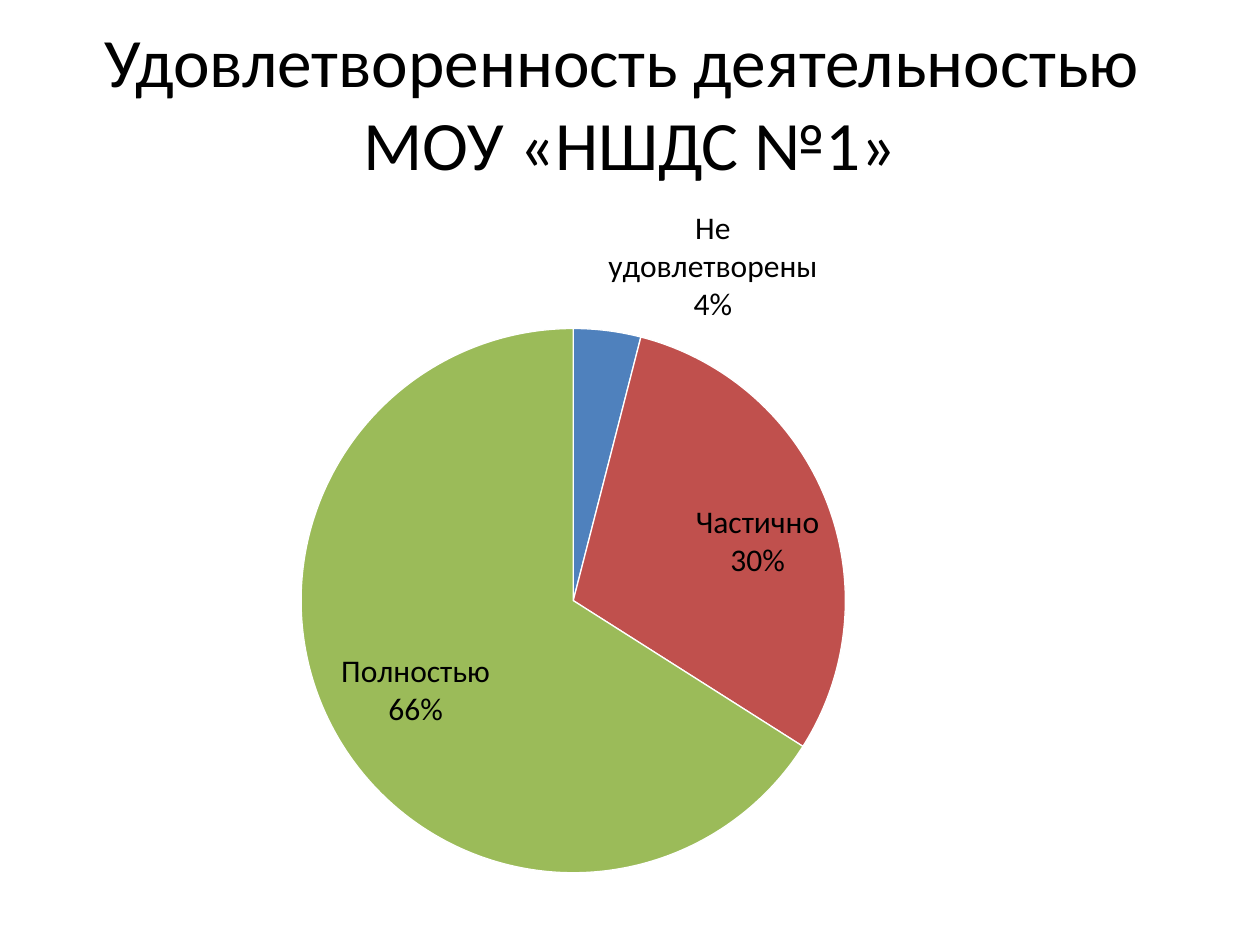
from lxml import etree
from pptx import Presentation
from pptx.chart import data
from pptx.dml.color import RGBColor
from pptx.enum import chart as ch, text
from pptx.oxml import ns
from pptx.util import Pt

COLORS = {"text": "000000", "edge": "FFFFFF"}
FONT = "Calibri"
ANSWERS = [
    ("Не удовлетворены", 4, "4F81BD", ch.XL_LABEL_POSITION.OUTSIDE_END),
    ("Частично", 30, "C0504D", ch.XL_LABEL_POSITION.INSIDE_END),
    ("Полностью", 66, "9BBB59", ch.XL_LABEL_POSITION.INSIDE_END),
]
PIE_LAYOUT = {"x": 0.21, "y": 0.2, "w": 0.48, "h": 0.78}


def style_font(font, size):
    font.name = FONT
    font.size = Pt(size)
    font.color.rgb = RGBColor.from_string(COLORS["text"])


def set_title(s, value):
    sp = s.shapes.title
    sp.left, sp.top, sp.width, sp.height = Pt(36), Pt(21.6), Pt(648), Pt(72.7)
    tf = sp.text_frame
    tf.text = value
    tf.word_wrap = True
    tf.auto_size = text.MSO_AUTO_SIZE.NONE
    tf.vertical_anchor = text.MSO_ANCHOR.MIDDLE
    p = tf.paragraphs[0]
    p.alignment = text.PP_ALIGN.CENTER
    style_font(p.font, 39.6)


def place_plot(chart):
    plot_area = chart._chartSpace.chart.plotArea
    for old in plot_area.findall(ns.qn("c:layout")):
        plot_area.remove(old)
    layout = etree.Element(ns.qn("c:layout"))
    manual = etree.SubElement(layout, ns.qn("c:manualLayout"))
    settings = {"layoutTarget": "inner", "xMode": "edge", "yMode": "edge", **PIE_LAYOUT}
    for tag, value in settings.items():
        etree.SubElement(manual, ns.qn(f"c:{tag}")).set("val", str(value))
    plot_area.insert(0, layout)


def add_pie(s):
    chart_data = data.CategoryChartData()
    chart_data.categories = [answer[0] for answer in ANSWERS]
    chart_data.add_series("Series 1", [answer[1] for answer in ANSWERS])
    chart = s.shapes.add_chart(
        ch.XL_CHART_TYPE.PIE, Pt(36), Pt(105.8), Pt(648), Pt(402.5), chart_data
    ).chart
    chart.has_title = False
    chart.has_legend = False
    style_font(chart.font, 18)
    plot = chart.plots[0]
    plot.vary_by_categories = True
    series = plot.series[0]
    labels = series.data_labels
    labels.show_category_name = True
    labels.show_percentage = True
    labels.show_value = False
    labels.show_legend_key = False
    style_font(labels.font, 18)
    for i, (_, _, color, position) in enumerate(ANSWERS):
        point = series.points[i]
        point.format.fill.solid()
        point.format.fill.fore_color.rgb = RGBColor.from_string(color)
        point.format.line.color.rgb = RGBColor.from_string(COLORS["edge"])
        point.format.line.width = Pt(0.75)
        point.data_label.position = position
        label = point.data_label._dLbl
        for tag, shown in (("showVal", 0), ("showCatName", 1), ("showPercent", 1)):
            label.find(ns.qn(f"c:{tag}")).set("val", str(shown))
    place_plot(chart)


def main():
    prs = Presentation()
    prs.slide_width, prs.slide_height = Pt(720), Pt(540)
    s = prs.slides.add_slide(prs.slide_layouts[5])
    set_title(s, "Удовлетворенность деятельностью \vМОУ «НШДС №1»")
    add_pie(s)
    prs.save("out.pptx")


if __name__ == "__main__":
    main()
